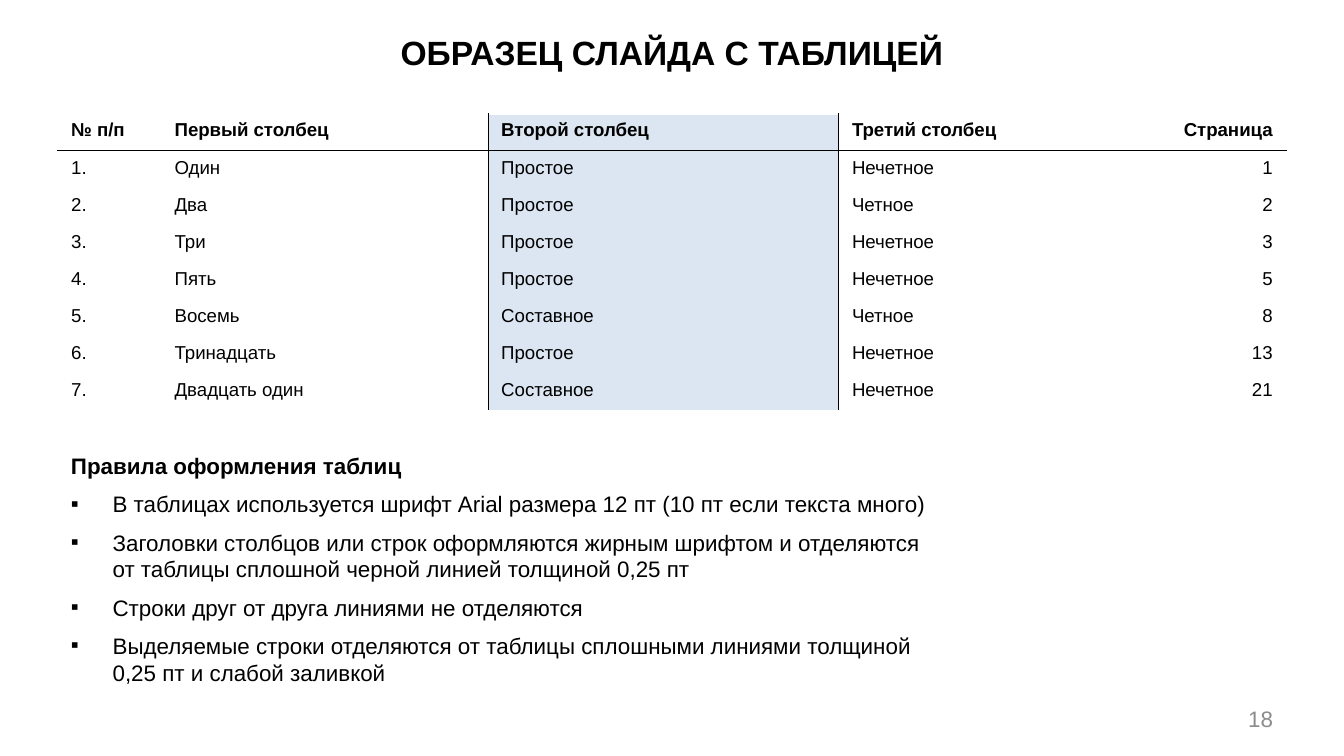
from dataclasses import dataclass
from lxml.etree import SubElement
from pptx import Presentation
from pptx.dml.color import RGBColor
from pptx.enum.text import MSO_ANCHOR, PP_ALIGN
from pptx.oxml.ns import qn
from pptx.util import Inches, Pt


@dataclass(frozen=True)
class Theme:
    """Font, colours and sizes of the slide."""
    font: str = "Arial"
    ink: str = "000000"
    paper: str = "FFFFFF"
    tint: str = "DCE6F2"
    gray: str = "8C8C8C"
    title: int = 18
    body: int = 12
    cell: int = 10
    rule: float = 0.25
    edge: float = 1


THEME = Theme()
PLAIN = "{2D5ABB26-0587-4C30-8999-92F81FD0307C}"
MARKED = 2
WIDTHS = [0.77, 2.43, 2.61, 2.17, 1.16]
HEAD = ["№ п/п", "Первый столбец", "Второй столбец", "Третий столбец", "Страница"]
ROWS = [
    ("Один", "Простое", "Нечетное", 1),
    ("Два", "Простое", "Четное", 2),
    ("Три", "Простое", "Нечетное", 3),
    ("Пять", "Простое", "Нечетное", 5),
    ("Восемь", "Составное", "Четное", 8),
    ("Тринадцать", "Простое", "Нечетное", 13),
    ("Двадцать один", "Составное", "Нечетное", 21),
]
RULES = [
    "В таблицах используется шрифт Arial размера 12 пт (10 пт если текста много)",
    "Заголовки столбцов или строк оформляются жирным шрифтом и отделяются\n"
    "от таблицы сплошной черной линией толщиной 0,25 пт",
    "Строки друг от друга линиями не отделяются",
    "Выделяемые строки отделяются от таблицы сплошными линиями толщиной\n"
    "0,25 пт и слабой заливкой",
]


def add_text(para, text, size, bold=False, color=THEME.ink):
    """Add styled runs, with a line break between lines."""
    for i, line in enumerate(text.split("\n")):
        if i:
            para.add_line_break()
        run = para.add_run()
        run.text = line
        run.font.name = THEME.font
        run.font.size = Pt(size)
        run.font.bold = bold
        run.font.color.rgb = RGBColor.from_string(color)


def add_box(slide, left, top, width, height, anchor):
    """Add a wrapping text box and return its frame."""
    box = slide.shapes.add_textbox(Inches(left), Inches(top), Inches(width), Inches(height))
    frame = box.text_frame
    frame.word_wrap = True
    frame.vertical_anchor = anchor
    return frame


def add_label(slide, area, text, size, align, bold=False, color=THEME.ink):
    """Add a one-line label centred in height."""
    para = add_box(slide, *area, MSO_ANCHOR.MIDDLE).paragraphs[0]
    para.alignment = align
    add_text(para, text, size, bold, color)


def add_edge(props, side, color, width):
    """Add one cell border, or an empty one without a colour."""
    line = SubElement(props, qn(f"a:ln{side}"), w=str(Pt(width)))
    if color:
        fill = SubElement(line, qn("a:solidFill"))
        SubElement(fill, qn("a:srgbClr"), val=color)
    else:
        SubElement(line, qn("a:noFill"))


def style_cell(cell, row, col):
    """Set borders and fill from the place in the grid."""
    props = cell._tc.get_or_add_tcPr()
    inked = {
        "L": col in (MARKED, MARKED + 1),
        "R": col in (MARKED - 1, MARKED),
        "T": row == 1,
        "B": row == 0,
    }
    outer = {
        "L": col == 0 and row < 2,
        "R": col == len(HEAD) - 1,
        "T": row == 0,
        "B": False,
    }
    for side, inky in inked.items():
        if inky:
            add_edge(props, side, THEME.ink, THEME.rule)
        elif outer[side]:
            add_edge(props, side, THEME.paper, THEME.edge)
        else:
            add_edge(props, side, None, THEME.edge)
    if col == MARKED:
        cell.fill.solid()
        cell.fill.fore_color.rgb = RGBColor.from_string(THEME.tint)
    else:
        cell.fill.background()


def add_grid(slide):
    """Add the table with one marked column."""
    data = [HEAD] + [(f"{i}.", *row) for i, row in enumerate(ROWS, 1)]
    high, top = 2.2, 0.27
    shape = slide.shapes.add_table(
        len(data), len(HEAD), Inches(0.43), Inches(0.85), Inches(sum(WIDTHS)), Inches(high))
    table = shape.table
    table.horz_banding = False
    table._tbl.tblPr.find(qn("a:tableStyleId")).text = PLAIN
    for column, width in zip(table.columns, WIDTHS):
        column.width = Inches(width)
    for r, values in enumerate(data):
        table.rows[r].height = Inches((high - top) / len(ROWS) if r else top)
        for c, value in enumerate(values):
            cell = table.cell(r, c)
            cell.margin_left = cell.margin_right = Inches(0.1)
            cell.margin_top = cell.margin_bottom = Inches(0.04)
            para = cell.text_frame.paragraphs[0]
            if r:
                para.line_spacing = 1.07
            if c == len(HEAD) - 1:
                para.alignment = PP_ALIGN.RIGHT
            add_text(para, str(value), THEME.cell, r == 0)
            style_cell(cell, r, c)


def add_rules(slide):
    """Add the heading and its bullet list."""
    frame = add_box(slide, 0.43, 3.44, 9.14, 1.71, MSO_ANCHOR.BOTTOM)
    para = frame.paragraphs[0]
    para.space_after = Pt(6)
    add_text(para, "Правила оформления таблиц", THEME.body, True)
    for rule in RULES:
        para = frame.add_paragraph()
        para.space_after = Pt(6)
        props = para._p.get_or_add_pPr()
        props.set("marL", str(Inches(0.31)))
        props.set("indent", str(-Inches(0.31)))
        SubElement(props, qn("a:buFont"), typeface=THEME.font)
        SubElement(props, qn("a:buChar"), char="▪")
        add_text(para, rule, THEME.body)


def main():
    """Build the slide and save it."""
    deck = Presentation()
    deck.slide_width, deck.slide_height = Inches(10), Inches(10 * 9 / 16)
    slide = deck.slides.add_slide(deck.slide_layouts[6])
    add_grid(slide)
    add_rules(slide)
    add_label(slide, (1.53, 0.1, 6.94, 0.58), "ОБРАЗЕЦ СЛАЙДА С ТАБЛИЦЕЙ",
              THEME.title, PP_ALIGN.CENTER, bold=True)
    add_label(slide, (8.78, 5.17, 0.79, 0.36), "18",
              THEME.body, PP_ALIGN.RIGHT, color=THEME.gray)
    deck.save("out.pptx")


if __name__ == "__main__":
    main()
